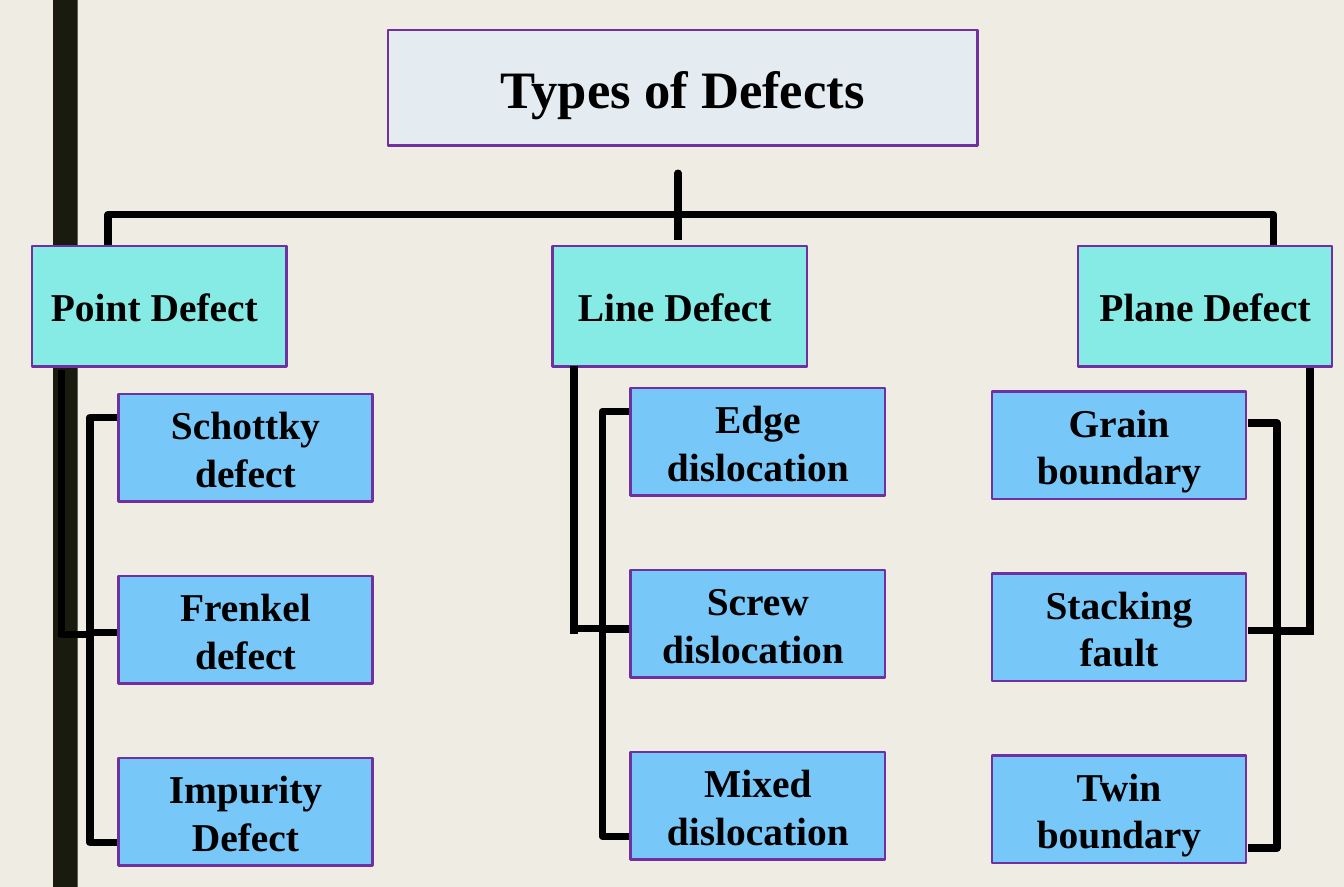
from dataclasses import dataclass

import lxml.etree
import pptx
import pptx.dml.color
import pptx.enum.shapes
import pptx.enum.text
import pptx.oxml.ns
import pptx.shapes.autoshape
import pptx.slide
import pptx.util

Cm = pptx.util.Cm
Pt = pptx.util.Pt
RGBColor = pptx.dml.color.RGBColor
Preset = pptx.enum.shapes.MSO_SHAPE

CREAM = RGBColor(0xEF, 0xED, 0xE3)
DARK = RGBColor(0x19, 0x1B, 0x0E)
PALE = RGBColor(0xE4, 0xEC, 0xF1)
TEAL = RGBColor(0x86, 0xEA, 0xE5)
BLUE = RGBColor(0x77, 0xC7, 0xF9)
PURPLE = RGBColor(0x70, 0x30, 0xA0)
BLACK = RGBColor(0, 0, 0)

# Shared measures in centimetres
BOX_WIDTH = 5.46
HEAD_TOP, HEAD_HEIGHT = 5.28, 2.59
KIND_HEIGHT, KIND_PITCH = 2.31, 3.91
BRACE_WIDTH, BRACE_HEIGHT = 1.22, 9.12
STEM_LENGTH, CROSSBAR_DROP = 5.74, 5.64


@dataclass(frozen=True)
class Family:
    head: str
    kinds: tuple[str, ...]
    head_left: float
    kinds_left: float
    kinds_top: float
    brace_left: float
    brace_top: float
    stem_x: float
    stem_top: float
    opens_right: bool = True


FAMILIES = (
    Family("Point Defect ", ("Schottky defect", "Frenkel defect", "Impurity Defect"),
           0.69, 2.54, 8.46, 1.32, 8.97, 1.32, 7.95),
    Family("Line Defect ", ("Edge dislocation", "Screw dislocation ", "Mixed dislocation"),
           11.86, 13.54, 8.33, 12.32, 8.84, 12.32, 7.87),
    Family("Plane Defect", ("Grain boundary", "Stacking fault", "Twin boundary"),
           23.14, 21.29, 8.41, 26.8, 9.09, 28.12, 7.9, opens_right=False),
)


def add_preset(page: pptx.slide.Slide, preset: Preset, left: float, top: float,
               width: float, height: float) -> pptx.shapes.autoshape.Shape:
    shape = page.shapes.add_shape(preset, Cm(left), Cm(top), Cm(width), Cm(height))
    shape.shadow.inherit = False
    return shape


def add_box(page: pptx.slide.Slide, text: str, left: float, top: float, width: float,
            height: float, fill: RGBColor, size: int = 24) -> None:
    box = add_preset(page, Preset.RECTANGLE, left, top, width, height)
    box.fill.solid()
    box.fill.fore_color.rgb = fill
    box.line.color.rgb = PURPLE
    box.line.width = Pt(1.5)
    frame = box.text_frame
    frame.word_wrap = True
    frame.vertical_anchor = pptx.enum.text.MSO_ANCHOR.MIDDLE
    para = frame.paragraphs[0]
    para.text = text
    para.alignment = pptx.enum.text.PP_ALIGN.CENTER
    para.font.name = "Times New Roman"
    para.font.size = Pt(size)
    para.font.bold = True
    para.font.color.rgb = BLACK


def add_brace(page: pptx.slide.Slide, left: float, top: float, width: float,
              height: float, rotation: int) -> None:
    brace = add_preset(page, Preset.RIGHT_BRACE, left, top, width, height)
    brace.adjustments[0] = 0
    brace.adjustments[1] = 0.489
    brace.rotation = rotation
    brace.fill.background()
    brace.line.color.rgb = BLACK
    brace.line.width = Pt(4.5)


def add_line(page: pptx.slide.Slide, x1: float, y1: float, x2: float, y2: float) -> None:
    line = page.shapes.add_connector(
        pptx.enum.shapes.MSO_CONNECTOR.STRAIGHT, Cm(x1), Cm(y1), Cm(x2), Cm(y2))
    line.line.color.rgb = BLACK
    line.line.width = Pt(4.5)
    lxml.etree.SubElement(line._element.spPr, pptx.oxml.ns.qn("a:effectLst"))


def add_family(page: pptx.slide.Slide, family: Family) -> None:
    add_box(page, family.head, family.head_left, HEAD_TOP, BOX_WIDTH, HEAD_HEIGHT, TEAL)

    # Bracket, stem and crossbar
    add_brace(page, family.brace_left, family.brace_top, BRACE_WIDTH, BRACE_HEIGHT,
              180 if family.opens_right else 0)
    add_line(page, family.stem_x, family.stem_top,
             family.stem_x, family.stem_top + STEM_LENGTH)
    crossbar_y = family.stem_top + CROSSBAR_DROP
    crossbar_end = family.brace_left + (BRACE_WIDTH if family.opens_right else 0)
    add_line(page, family.brace_left + BRACE_WIDTH / 2, crossbar_y, crossbar_end, crossbar_y)

    # Kinds of defect, evenly spaced
    for row, kind in enumerate(family.kinds):
        add_box(page, kind, family.kinds_left, family.kinds_top + row * KIND_PITCH,
                BOX_WIDTH, KIND_HEIGHT, BLUE)


def main() -> None:
    deck = pptx.Presentation()
    deck.slide_width, deck.slide_height = Cm(28.85), Cm(19.05)
    page = deck.slides.add_slide(deck.slide_layouts[6])

    # Background and side bar
    page.background.fill.solid()
    page.background.fill.fore_color.rgb = CREAM
    bar = add_preset(page, Preset.RECTANGLE, 1.14, 0, 0.53, 19.05)
    bar.fill.solid()
    bar.fill.fore_color.rgb = DARK
    bar.line.fill.background()

    # Title and the bracket that spans the families
    add_box(page, "Types of Defects", 8.33, 0.64, 12.65, 2.49, PALE, size=32)
    add_brace(page, 13.94, -7.9, 1.78, 25.02, 270)
    add_line(page, 14.55, 4.24, 14.55, 5.16)

    for family in FAMILIES:
        add_family(page, family)

    deck.save("out.pptx")


if __name__ == "__main__":
    main()
